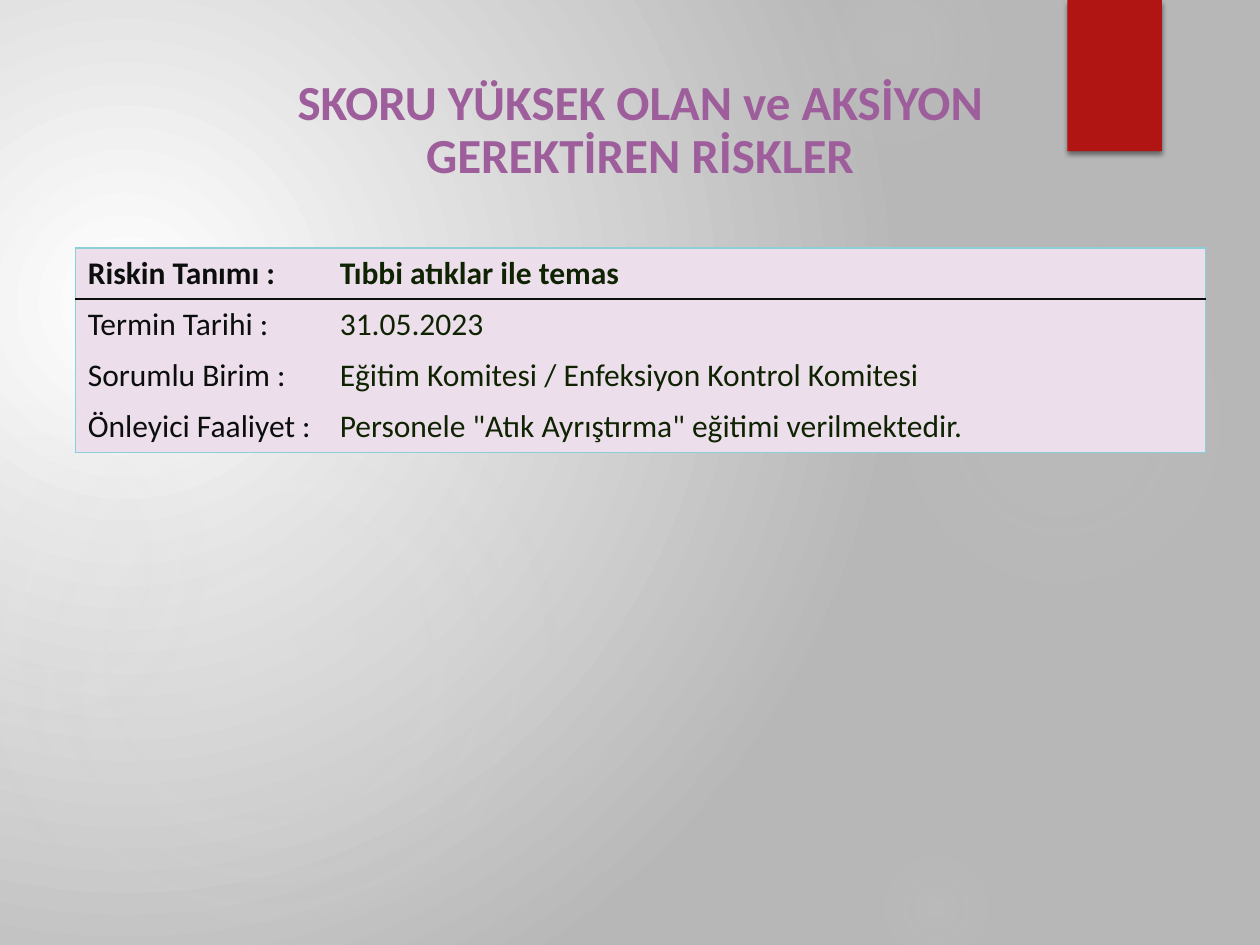
from dataclasses import dataclass

import pptx
import pptx.dml.color
import pptx.enum.shapes
import pptx.enum.text
import pptx.oxml
import pptx.oxml.ns
import pptx.util
from pptx.dml.color import RGBColor

Pt = pptx.util.Pt
qn = pptx.oxml.ns.qn

WHITE = RGBColor(0xFF, 0xFF, 0xFF)
GRAY = RGBColor(0xB7, 0xB7, 0xB7)
GLOW = RGBColor(0xD9, 0xD9, 0xD9)
RED = RGBColor(0xB0, 0x15, 0x13)
PURPLE = RGBColor(0x9E, 0x5E, 0x9B)
LILAC = RGBColor(0xEC, 0xDF, 0xEB)
AQUA = RGBColor(0x8A, 0xD0, 0xD5)
LABEL = RGBColor(0x0C, 0x0D, 0x0D)
VALUE = RGBColor(0x0F, 0x23, 0x03)
FONT = "Calibri"

ROWS = [
    ("Riskin Tanımı :", "Tıbbi atıklar ile temas"),
    ("Termin Tarihi :", "31.05.2023"),
    ("Sorumlu Birim :", "Eğitim Komitesi / Enfeksiyon Kontrol Komitesi"),
    ("Önleyici Faaliyet :", 'Personele "Atık Ayrıştırma" eğitimi verilmektedir.'),
]
COLUMN_WIDTHS = (144, 501.8)
ROW_HEIGHT = 29.2


@dataclass(frozen=True)
class Stop:
    position: int
    color: RGBColor
    opacity: int = 100


@dataclass(frozen=True)
class Glow:
    left: float
    top: float
    diameter: float
    center_opacity: int
    middle_opacity: int
    edge: int


GLOWS = [
    Glow(496, 132, 222, 7, 6, 69),
    Glow(448, -36, 126, 14, 7, 73),
    Glow(496, 480, 78, 9, 5, 66),
    Glow(-12, 210, 330, 11, 10, 75),
    Glow(-66, 228, 186, 8, 8, 72),
]


def make_radial(parent, stops: list[Stop], focus: tuple[int, int, int, int]) -> None:
    """Replace the solid fill inside parent by a circular gradient."""
    stop_xml = "".join(
        f'<a:gs pos="{stop.position * 1000}"><a:srgbClr val="{stop.color}">'
        f'<a:alpha val="{stop.opacity * 1000}"/></a:srgbClr></a:gs>'
        for stop in stops
    )
    left, top, right, bottom = (value * 1000 for value in focus)
    gradient = pptx.oxml.parse_xml(
        f'<a:gradFill {pptx.oxml.ns.nsdecls("a")} rotWithShape="1">'
        f'<a:gsLst>{stop_xml}</a:gsLst><a:path path="circle">'
        f'<a:fillToRect l="{left}" t="{top}" r="{right}" b="{bottom}"/>'
        '</a:path></a:gradFill>'
    )
    parent.replace(parent.find(qn("a:solidFill")), gradient)


def paint_background(slide) -> None:
    slide.background.fill.solid()
    properties = slide.element.find(".//" + qn("p:bgPr"))
    make_radial(properties, [Stop(0, WHITE), Stop(100, GRAY)], (45, 65, 125, 100))


def add_plain_shape(slide, kind, left: float, top: float, width: float,
                    height: float, color: RGBColor):
    shape = slide.shapes.add_shape(kind, Pt(left), Pt(top), Pt(width), Pt(height))
    shape.shadow.inherit = False
    shape.fill.solid()
    shape.fill.fore_color.rgb = color
    shape.line.fill.background()
    return shape


def add_glow(slide, glow: Glow) -> None:
    shape = add_plain_shape(slide, pptx.enum.shapes.MSO_SHAPE.OVAL, glow.left, glow.top,
                            glow.diameter, glow.diameter, GLOW)
    stops = [Stop(0, GLOW, glow.center_opacity), Stop(36, GLOW, glow.middle_opacity),
             Stop(glow.edge, GLOW, 0)]
    make_radial(shape.element.spPr, stops, (50, 50, 50, 50))


def add_ribbon(slide) -> None:
    ribbon = add_plain_shape(slide, pptx.enum.shapes.MSO_SHAPE.RECTANGLE,
                             610, 0, 54, 86.4, RED)
    effects = ribbon.element.spPr.find(qn("a:effectLst"))
    effects.append(pptx.oxml.parse_xml(
        f'<a:outerShdw {pptx.oxml.ns.nsdecls("a")} blurRad="{Pt(3)}" dist="{Pt(2)}" '
        'dir="5400000" rotWithShape="0"><a:srgbClr val="000000">'
        '<a:alpha val="45000"/></a:srgbClr></a:outerShdw>'
    ))


def add_title(slide) -> None:
    title = slide.shapes.title
    title.left, title.top, title.width, title.height = Pt(158.4), Pt(41.8), Pt(414.7), Pt(67)
    slide.shapes.element.append(title.element)  # bring to front
    frame = title.text_frame
    frame.text = "SKORU YÜKSEK OLAN ve AKSİYON GEREKTİREN RİSKLER"
    frame.word_wrap = True
    frame.auto_size = pptx.enum.text.MSO_AUTO_SIZE.NONE
    frame.vertical_anchor = pptx.enum.text.MSO_ANCHOR.BOTTOM
    paragraph = frame.paragraphs[0]
    paragraph.alignment = pptx.enum.text.PP_ALIGN.CENTER
    paragraph.line_spacing = 0.9
    paragraph.space_after = Pt(6)
    format_font(paragraph.font, 28, PURPLE, True)


def format_font(font, size: float, color: RGBColor, bold: bool) -> None:
    font.name = FONT
    font.size = Pt(size)
    font.bold = bold
    font.color.rgb = color


def set_borders(cell, borders: dict[str, RGBColor | None]) -> None:
    """Draw the sides that have a colour and blank the others."""
    properties = cell._tc.get_or_add_tcPr()
    for index, side in enumerate("LRTB"):
        color = borders[side]
        fill = f'<a:solidFill><a:srgbClr val="{color}"/></a:solidFill>' if color else "<a:noFill/>"
        properties.insert(index, pptx.oxml.parse_xml(
            f'<a:ln{side} {pptx.oxml.ns.nsdecls("a")} w="{Pt(1)}">{fill}</a:ln{side}>'
        ))


def add_risk_table(slide) -> None:
    frame = slide.shapes.add_table(len(ROWS), len(COLUMN_WIDTHS), Pt(43), Pt(141.8),
                                   Pt(sum(COLUMN_WIDTHS)), Pt(ROW_HEIGHT * len(ROWS)))
    table = frame.table
    table.first_row = table.horz_banding = False
    for column, width in zip(table.columns, COLUMN_WIDTHS):
        column.width = Pt(width)
    last = len(ROWS) - 1
    for row_index, texts in enumerate(ROWS):
        table.rows[row_index].height = Pt(ROW_HEIGHT)
        for column_index, (text, color) in enumerate(zip(texts, (LABEL, VALUE))):
            cell = table.cell(row_index, column_index)
            cell.text = text
            cell.fill.solid()
            cell.fill.fore_color.rgb = LILAC
            format_font(cell.text_frame.paragraphs[0].font, 18, color, row_index == 0)
            set_borders(cell, {
                "L": AQUA if column_index == 0 else None,
                "R": AQUA if column_index == 1 else None,
                "T": {0: AQUA, 1: LABEL}.get(row_index),
                "B": {0: LABEL, last: AQUA}.get(row_index),
            })


def main() -> None:
    presentation = pptx.Presentation()
    presentation.slide_width, presentation.slide_height = Pt(720), Pt(540)
    slide = presentation.slides.add_slide(presentation.slide_layouts[5])
    paint_background(slide)
    for glow in GLOWS:
        add_glow(slide, glow)
    add_ribbon(slide)
    add_title(slide)
    add_risk_table(slide)
    presentation.save("out.pptx")


if __name__ == "__main__":
    main()
